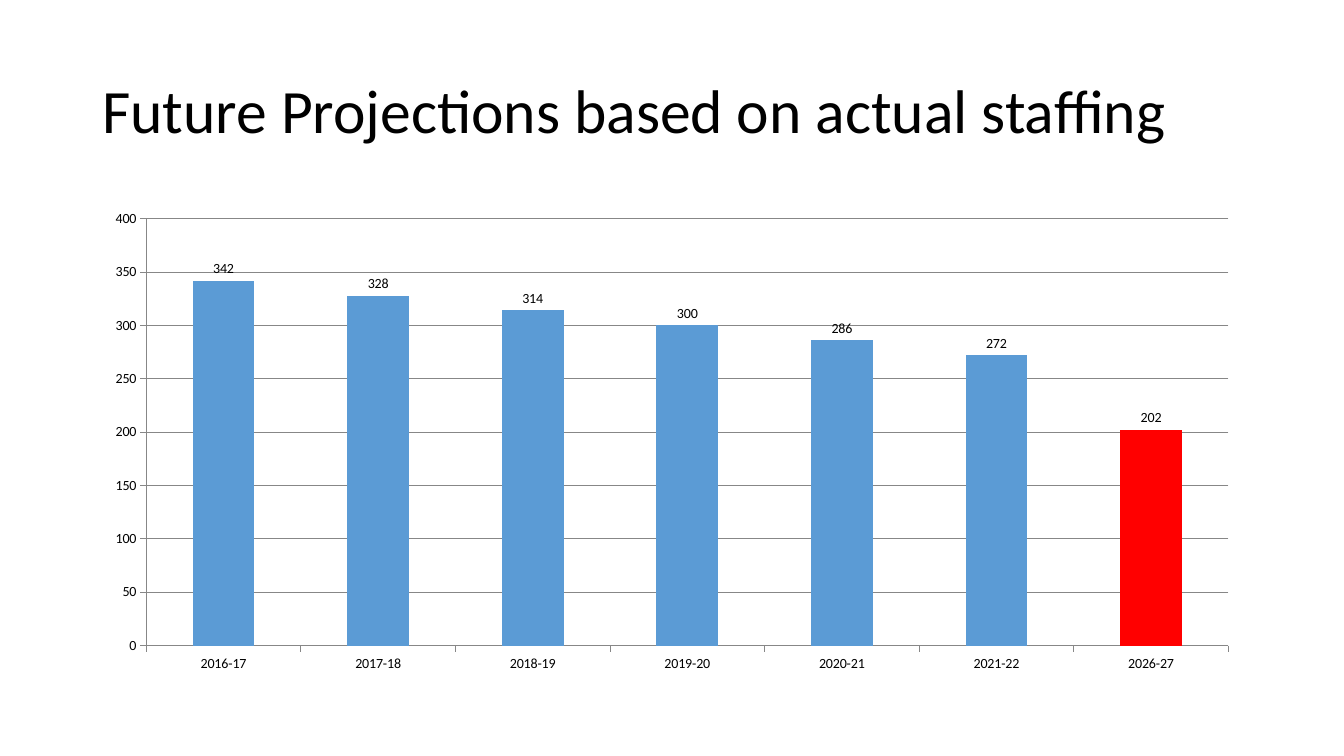
from pptx import Presentation
from pptx import util as u
from pptx.chart import data
from pptx.dml.color import RGBColor
from pptx.enum import chart as ch, text

BLACK = RGBColor(0x00, 0x00, 0x00)
BLUE = RGBColor(0x5B, 0x9B, 0xD5)
RED = RGBColor(0xFF, 0x00, 0x00)
GRAY = RGBColor(0x87, 0x87, 0x87)

LEFT, WIDTH = 66, 828
STAFFING = {"2016-17": 342, "2017-18": 328, "2018-19": 314, "2019-20": 300,
            "2020-21": 286, "2021-22": 272, "2026-27": 202}


def apply(target, values):
    for name, value in values.items():
        setattr(target, name, value)


class SlideBuilder:
    """Holds the text style and the slide being filled."""

    font_name = "Calibri"

    def __init__(self, slide):
        self.slide = slide

    def style_font(self, font, size):
        apply(font, {"name": self.font_name, "size": u.Pt(size)})
        font.color.rgb = BLACK

    def title(self, wording, left, top, width, height, size):
        box = self.slide.shapes.add_textbox(*map(u.Pt, (left, top, width, height)))
        apply(box.text_frame, {"word_wrap": True,
                               "vertical_anchor": text.MSO_ANCHOR.MIDDLE})
        heading = box.text_frame.paragraphs[0]
        heading.line_spacing = 0.9
        run = heading.add_run()
        run.text = wording
        self.style_font(run.font, size)

    def columns(self, values, left, top, width, height, size, highlights):
        staffing = data.CategoryChartData()
        staffing.categories = list(values)
        staffing.add_series("Series 1", list(values.values()))
        chart = self.slide.shapes.add_chart(
            ch.XL_CHART_TYPE.COLUMN_CLUSTERED,
            *map(u.Pt, (left, top, width, height)), staffing).chart
        apply(chart, {"has_legend": False, "has_title": False})
        self.style_font(chart.font, size)

        # Axes and gridlines
        years, staff = chart.category_axis, chart.value_axis
        apply(staff, {"minimum_scale": 0, "maximum_scale": 400, "major_unit": 50,
                      "has_major_gridlines": True})
        for axis in (years, staff):
            axis.major_tick_mark = ch.XL_TICK_MARK.OUTSIDE
        for part in (years, staff, staff.major_gridlines):
            part.format.line.color.rgb = GRAY
            part.format.line.width = u.Pt(0.75)

        # Columns and their values
        plot = chart.plots[0]
        apply(plot, {"gap_width": 150, "vary_by_categories": False,
                     "has_data_labels": True})
        apply(plot.data_labels, {"show_value": True,
                                 "position": ch.XL_LABEL_POSITION.OUTSIDE_END})
        self.style_font(plot.data_labels.font, size)
        bars = plot.series[0]
        fills = [(bars, BLUE)]
        fills += [(bars.points[list(values).index(year)], color)
                  for year, color in highlights.items()]
        for part, color in fills:
            part.format.fill.solid()
            part.format.fill.fore_color.rgb = color


def main():
    deck = Presentation()
    apply(deck, {"slide_width": u.Pt(960), "slide_height": u.Pt(540)})
    builder = SlideBuilder(deck.slides.add_slide(deck.slide_layouts[6]))

    # Heading
    builder.title("Future Projections based on actual staffing",
                  LEFT, 28.75, WIDTH, 104.4, size=44)

    # Staffing by school year, with the long-range projection in red
    builder.columns(STAFFING, LEFT, 143.75, WIDTH, 342.6, size=10,
                    highlights={"2026-27": RED})

    deck.save("out.pptx")


if __name__ == "__main__":
    main()
